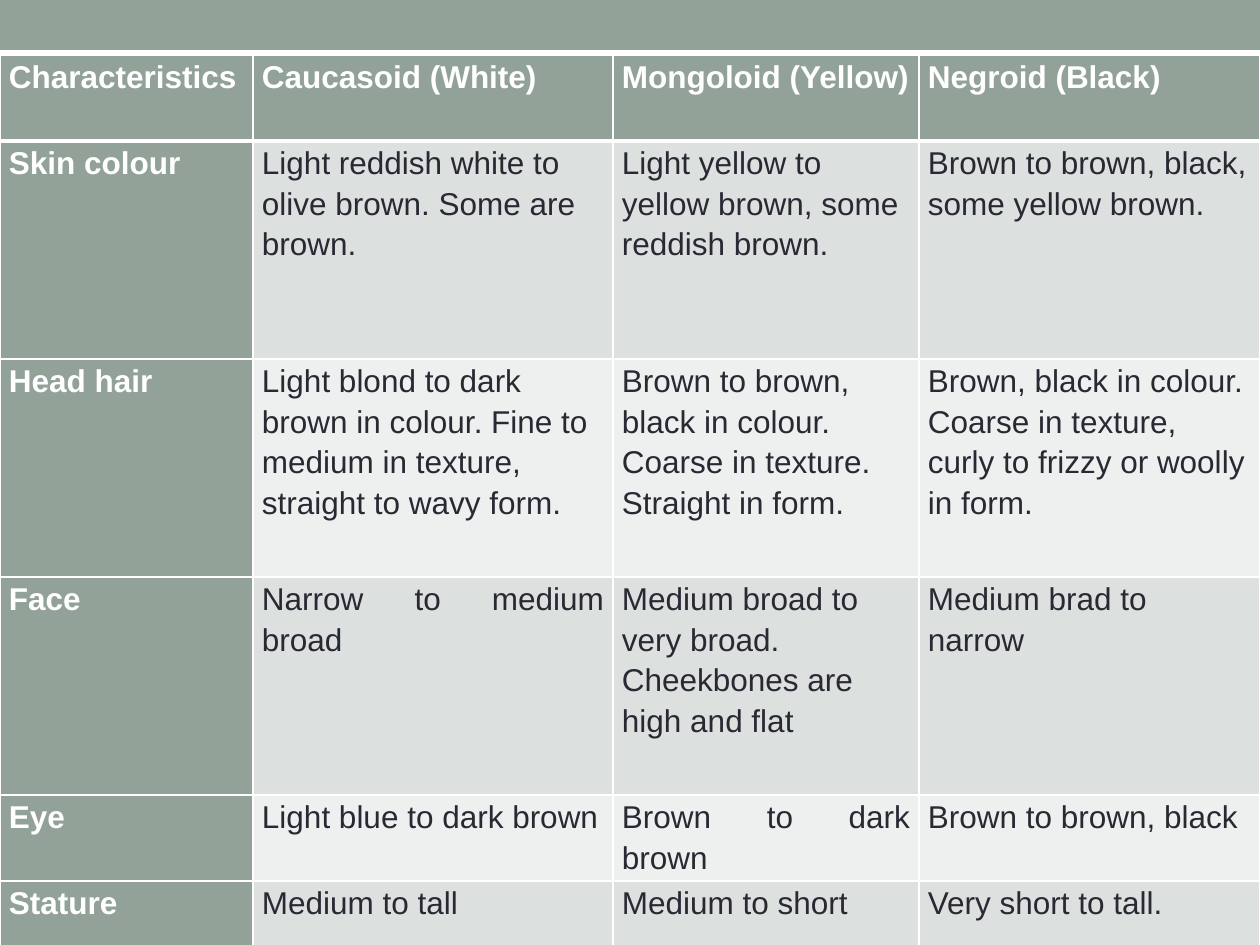
from dataclasses import dataclass

from lxml import etree
from pptx import Presentation
from pptx import util as u
from pptx.dml.color import RGBColor
from pptx.enum import shapes, text
from pptx.oxml import ns

HEADER = ["Characteristics", "Caucasoid (White)", "Mongoloid (Yellow)", "Negroid (Black)"]
ROWS = [
    ["Skin colour",
     "Light reddish white to olive brown. Some are brown.",
     "Light yellow to yellow brown, some reddish brown.",
     "Brown to brown, black, some yellow brown."],
    ["Head hair",
     "Light blond to dark brown in colour. Fine to medium in texture, straight to wavy form.",
     "Brown to brown, black in colour. Coarse in texture. Straight in form.",
     "Brown, black in colour. Coarse in texture, curly to frizzy or woolly in form."],
    ["Face",
     "Narrow to medium broad",
     "Medium broad to very broad. Cheekbones are high and flat",
     "Medium brad to narrow"],
    ["Eye", "Light blue to dark brown", "Brown to dark brown", "Brown to brown, black"],
    ["Stature", "Medium to tall", "Medium to short", "Very short to tall."],
]
LEFT_ALIGNED = {(1, 1), (1, 2), (1, 3), (2, 1), (2, 2), (2, 3), (3, 2), (3, 3)}

SLIDE_W, SLIDE_H = 1260, 945
BAND_H = 50
TABLE_TOP = 55
COL_W = [253, 360, 306, 341]
ROW_H = [86, 218, 218, 218, 86, 69]
CELL_INSET = 9


@dataclass(frozen=True)
class Theme:
    accent: str = "93A299"
    bands: tuple = ("DCE0DE", "EEF0EF")
    ink: str = "292934"
    white: str = "FFFFFF"
    font: str = "Arial"
    size: int = 18
    thin: int = 1
    thick: int = 3


THEME = Theme()


def px(n):
    return u.Emu(round(n * 914400 / 126))


def rgb(value):
    return RGBColor.from_string(value)


def set_borders(cell, top, bottom):
    tc_pr = cell._tc.get_or_add_tcPr()
    widths = {"lnL": THEME.thin, "lnR": THEME.thin, "lnT": top, "lnB": bottom}
    for tag, width in widths.items():
        ln = etree.SubElement(tc_pr, ns.qn(f"a:{tag}"), w=str(u.Pt(width)))
        fill = etree.SubElement(ln, ns.qn("a:solidFill"))
        etree.SubElement(fill, ns.qn("a:srgbClr"), val=THEME.white)


def format_cell(cell, label, row, col):
    heading = row == 0 or col == 0
    set_borders(cell,
                THEME.thick if row == 1 else THEME.thin,
                THEME.thick if row == 0 else THEME.thin)
    cell.fill.solid()
    cell.fill.fore_color.rgb = rgb(THEME.accent if heading else THEME.bands[(row - 1) % 2])
    cell.margin_left = cell.margin_right = px(CELL_INSET)
    cell.margin_top = cell.margin_bottom = 0
    p = cell.text_frame.paragraphs[0]
    p.text = label
    left = (row, col) in LEFT_ALIGNED
    p.alignment = text.PP_ALIGN.LEFT if left else text.PP_ALIGN.JUSTIFY
    p.line_spacing = 1.15
    p.space_after = u.Pt(10)
    font = p.runs[0].font
    font.name, font.size, font.bold = THEME.font, u.Pt(THEME.size), heading
    font.color.rgb = rgb(THEME.white if heading else THEME.ink)


def add_band(s):
    band = s.shapes.add_shape(shapes.MSO_SHAPE.RECTANGLE, 0, 0, px(SLIDE_W), px(BAND_H))
    band.shadow.inherit = False
    band.fill.solid()
    band.fill.fore_color.rgb = rgb(THEME.accent)
    band.line.fill.background()


def add_traits_table(s):
    cells = [HEADER] + ROWS
    table = s.shapes.add_table(len(cells), len(HEADER), 0, px(TABLE_TOP),
                               px(sum(COL_W)), px(sum(ROW_H))).table
    table.first_col = True
    for column, width in zip(table.columns, COL_W):
        column.width = px(width)
    for row, height in zip(table.rows, ROW_H):
        row.height = px(height)
    for i, labels in enumerate(cells):
        for j, label in enumerate(labels):
            format_cell(table.cell(i, j), label, i, j)


def main():
    prs = Presentation()
    prs.slide_width, prs.slide_height = px(SLIDE_W), px(SLIDE_H)
    s = prs.slides.add_slide(prs.slide_layouts[6])
    add_band(s)
    add_traits_table(s)
    prs.save("out.pptx")


if __name__ == "__main__":
    main()
